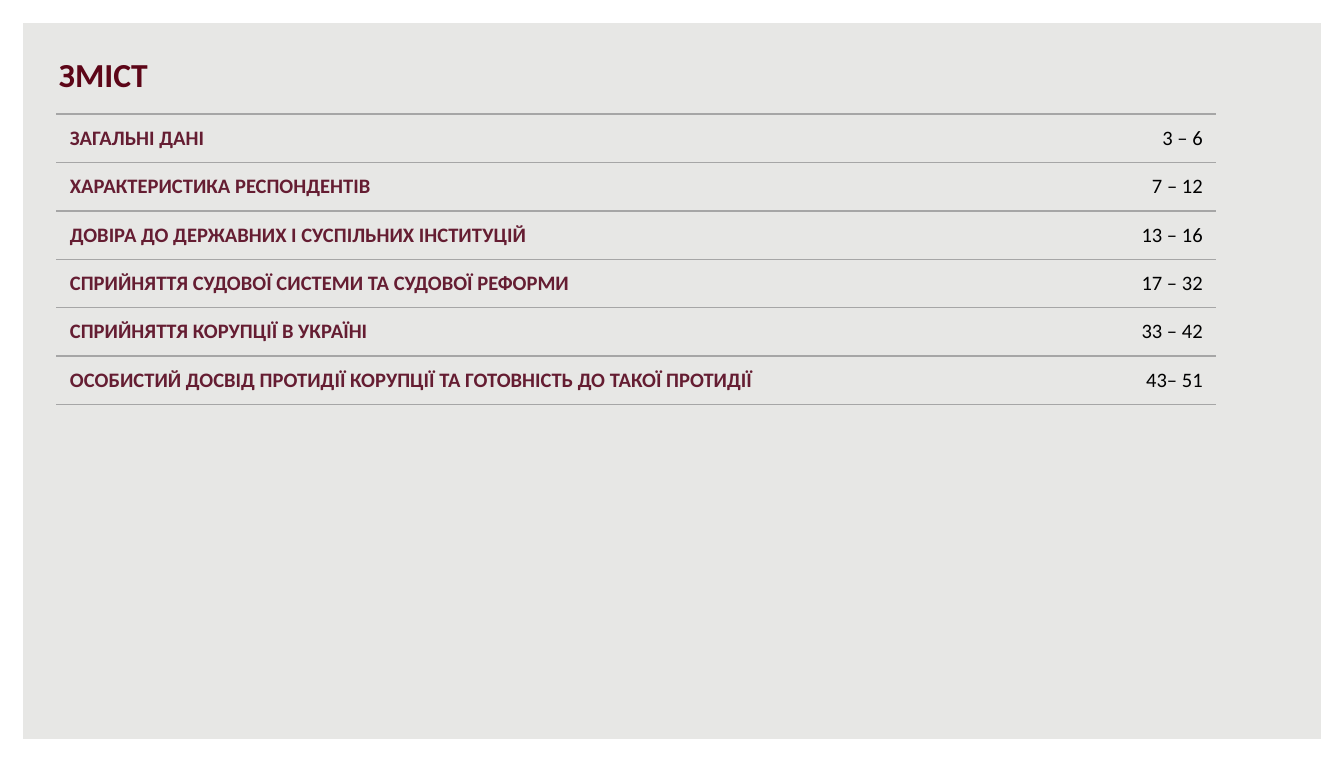
from dataclasses import dataclass
from typing import NamedTuple

from lxml.etree import SubElement
from pptx import Presentation
from pptx.dml.color import RGBColor
from pptx.enum.shapes import MSO_SHAPE as Shape
from pptx.enum.text import MSO_ANCHOR as Anchor, PP_ALIGN as Align
from pptx.oxml.ns import qn
from pptx.util import Emu, Pt

EMU_PER_PX = 9144  # 100 px to the inch
PAGE_WIDTH, PAGE_HEIGHT = 1000, 567
COLUMN_WIDTHS = (742, 121)
ROW_HEIGHT = 36


@dataclass(frozen=True)
class Theme:
    font: str = "Calibri"
    background: str = "E7E7E5"
    frame: str = "FFFFFF"
    title: str = "5D0618"
    section: str = "651D32"
    pages: str = "000000"
    rule: str = "A6A6A6"
    title_size: int = 18
    body_size: int = 11
    rule_width: int = 1


class Section(NamedTuple):
    name: str
    pages: str


THEME = Theme()
SECTIONS = (
    Section("ЗАГАЛЬНІ ДАНІ", "3 – 6"),
    Section("ХАРАКТЕРИСТИКА РЕСПОНДЕНТІВ", "7 – 12"),
    Section("ДОВІРА ДО ДЕРЖАВНИХ І СУСПІЛЬНИХ ІНСТИТУЦІЙ", "13 – 16"),
    Section("СПРИЙНЯТТЯ СУДОВОЇ СИСТЕМИ ТА СУДОВОЇ РЕФОРМИ", "17 – 32"),
    Section("СПРИЙНЯТТЯ КОРУПЦІЇ В УКРАЇНІ", "33 – 42"),
    Section("ОСОБИСТИЙ ДОСВІД ПРОТИДІЇ КОРУПЦІЇ ТА ГОТОВНІСТЬ ДО ТАКОЇ ПРОТИДІЇ", "43– 51"),
)


def px(length: int) -> Emu:
    return Emu(length * EMU_PER_PX)


def write(holder, text: str, *, size: int, color: str, bold: bool = False,
          align: Align = Align.LEFT) -> None:
    """Put one formatted paragraph into a shape or a table cell."""
    para = holder.text_frame.paragraphs[0]
    para.alignment = align
    span = para.add_run()
    span.text = text
    span.font.name = THEME.font
    span.font.size = Pt(size)
    span.font.bold = bold
    span.font.color.rgb = RGBColor.from_string(color)


def rule_cell(cell) -> None:
    """Leave the cell clear, with rules above and below only."""
    properties = cell._tc.get_or_add_tcPr()
    for side in ("L", "R", "T", "B"):
        line = SubElement(properties, qn(f"a:ln{side}"), w=str(Pt(THEME.rule_width)))
        if side in "TB":
            fill = SubElement(line, qn("a:solidFill"))
            SubElement(fill, qn("a:srgbClr"), val=THEME.rule)
        else:
            SubElement(line, qn("a:noFill"))
    cell.fill.background()


def add_frame(page) -> None:
    frame = page.shapes.add_shape(Shape.FRAME, 0, 0, px(PAGE_WIDTH), px(PAGE_HEIGHT))
    frame.adjustments[0] = 0.03
    frame.shadow.inherit = False
    frame.fill.solid()
    frame.fill.fore_color.rgb = RGBColor.from_string(THEME.frame)
    frame.line.fill.background()


def add_title(page, text: str) -> None:
    box = page.shapes.add_textbox(px(34), px(34), px(850), px(40))
    box.text_frame.word_wrap = True
    box.text_frame.vertical_anchor = Anchor.BOTTOM
    box.text_frame.margin_bottom = px(4)
    write(box, text, size=THEME.title_size, color=THEME.title, bold=True)


def add_contents(page, sections: tuple[Section, ...]) -> None:
    table = page.shapes.add_table(
        len(sections), len(COLUMN_WIDTHS), px(42), px(85),
        px(sum(COLUMN_WIDTHS)), px(ROW_HEIGHT * len(sections))).table
    table.first_row = table.horz_banding = False
    for column, width in zip(table.columns, COLUMN_WIDTHS):
        column.width = px(width)
    for row, section in zip(table.rows, sections):
        name_cell, pages_cell = row.cells
        write(name_cell, section.name, size=THEME.body_size,
              color=THEME.section, bold=True)
        write(pages_cell, section.pages, size=THEME.body_size,
              color=THEME.pages, align=Align.RIGHT)
        for cell in (name_cell, pages_cell):
            cell.vertical_anchor = Anchor.MIDDLE
            rule_cell(cell)


def main() -> None:
    deck = Presentation()
    deck.slide_width, deck.slide_height = px(PAGE_WIDTH), px(PAGE_HEIGHT)
    page = deck.slides.add_slide(deck.slide_layouts[6])
    page.background.fill.solid()
    page.background.fill.fore_color.rgb = RGBColor.from_string(THEME.background)
    add_frame(page)
    add_title(page, "ЗМІСТ")
    add_contents(page, SECTIONS)
    deck.save("out.pptx")


if __name__ == "__main__":
    main()
